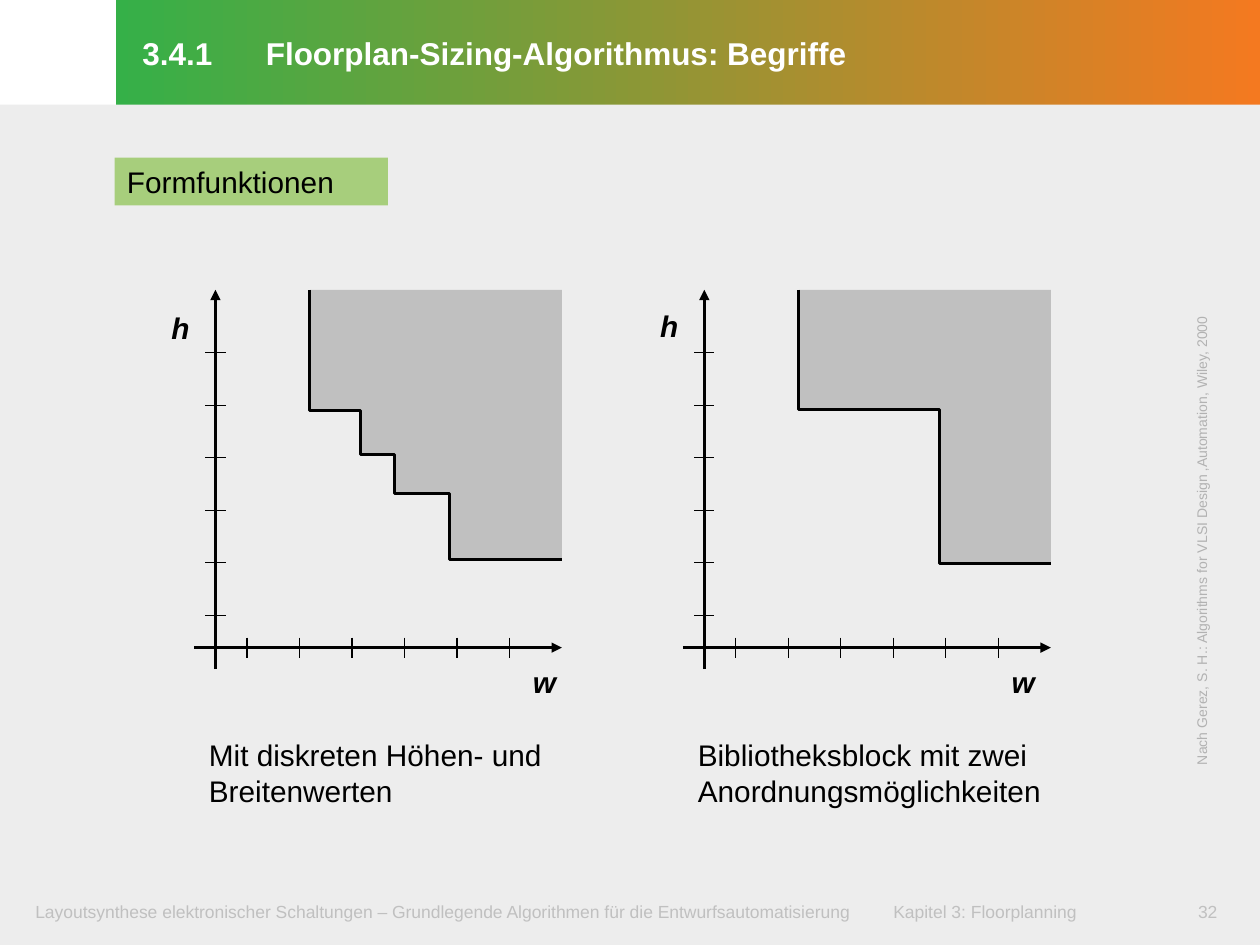
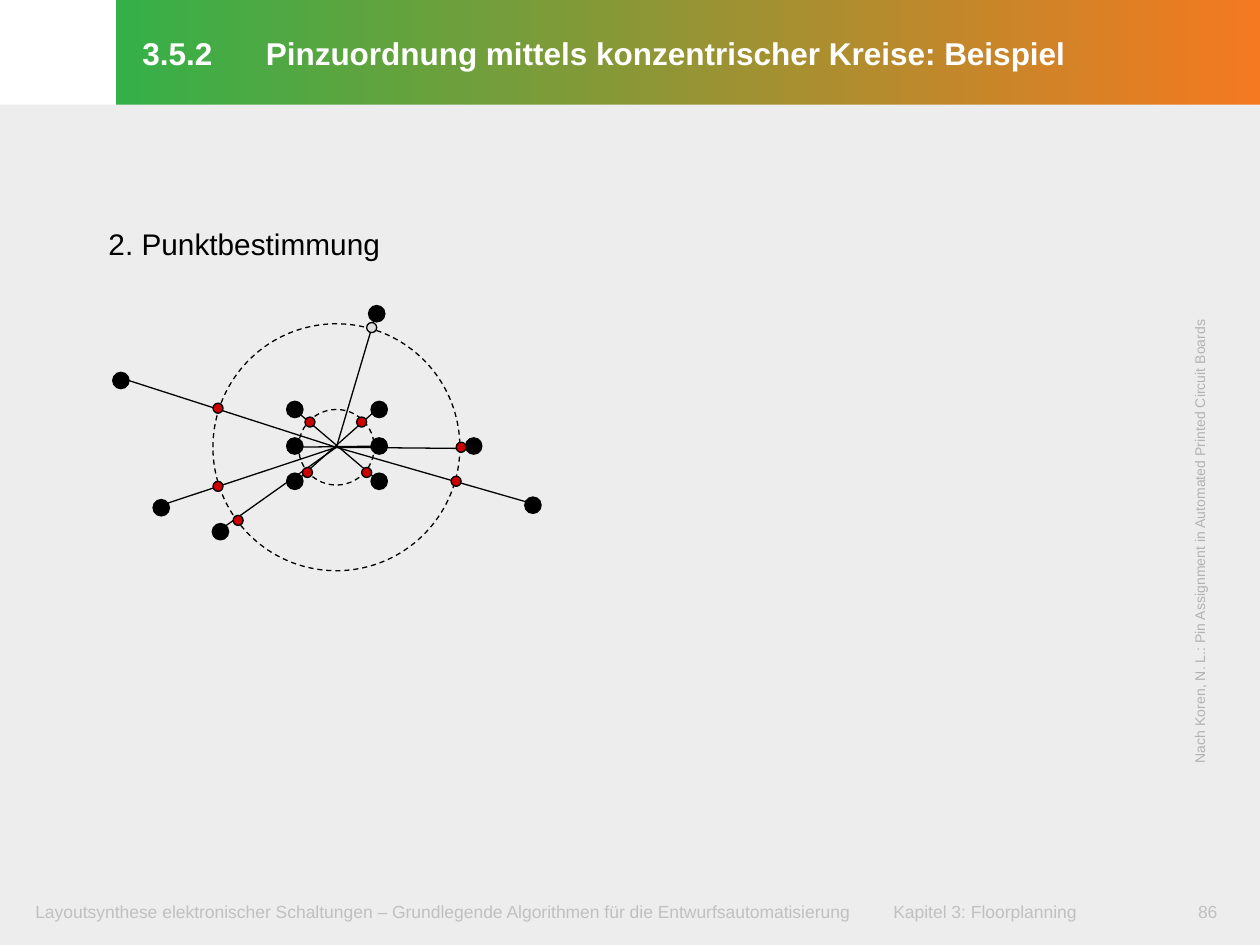
"""Build two slides on floorplan sizing and pin assignment."""
from dataclasses import dataclass

from lxml import etree
from pptx import Presentation
from pptx.dml.color import RGBColor
from pptx.enum import dml, shapes, text
from pptx.oxml import ns
from pptx.util import Inches, Pt

FONT = "Arial"
BLACK = RGBColor(0x00, 0x00, 0x00)
WHITE = RGBColor(0xFF, 0xFF, 0xFF)
PANEL = RGBColor(0xED, 0xED, 0xED)
GREY = RGBColor(0xC0, 0xC0, 0xC0)
SOURCE_GREY = RGBColor(0xB2, 0xB2, 0xB2)
BAND_GREEN = RGBColor(0x35, 0xB0, 0x48)
BAND_ORANGE = RGBColor(0xF4, 0x79, 0x20)
LABEL_GREEN = RGBColor(0xA7, 0xCE, 0x7C)
RED = RGBColor(0xCC, 0x00, 0x00)
PALE = RGBColor(0xDD, 0xDD, 0xDD)

THIN, THICK = 0.75, 1.63
TICK_COUNT, TICK_STEP, TICK_HALF = 6, 5 / 12, 0.08
PIN_SIZE, MARK_SIZE = 0.13, 0.08
FOOTER = ("Layoutsynthese elektronischer Schaltungen – Grundlegende Algorithmen "
          "für die Entwurfsautomatisierung\tKapitel 3: Floorplanning")

Point = tuple[float, float]
Box = tuple[float, float, float, float]


@dataclass(frozen=True)
class ShapeFunctionPlot:
    """A height-width diagram; its axes cross at (axis_x, AXIS_Y)."""
    axis_x: float
    curve: tuple[Point, ...]
    height_label: Point
    width_label: Point
    caption: str


AXIS_Y, AXIS_TOP = 5.14, 2.3
PLOTS = (
    ShapeFunctionPlot(
        1.71,
        ((2.46, 2.3), (2.46, 3.26), (2.86, 3.26), (2.86, 3.61), (3.13, 3.61),
         (3.13, 3.92), (3.57, 3.92), (3.57, 4.44), (4.46, 4.44)),
        (1.25, 2.41), (4.12, 5.22),
        "Mit diskreten Höhen- und\nBreitenwerten"),
    ShapeFunctionPlot(
        5.59,
        ((6.34, 2.3), (6.34, 3.25), (7.46, 3.25), (7.46, 4.47), (8.34, 4.47)),
        (5.13, 2.39), (7.92, 5.22),
        "Bibliotheksblock mit zwei Anordnungsmöglichkeiten"),
)

CENTRE = (2.67, 3.55)
CIRCLE_RADII = (0.98, 0.3)
BLOCK_PINS = [(x, y) for x in (2.34, 3.01) for y in (3.25, 3.54, 3.82)]
OUTER_PINS = [(3.76, 3.54), (2.99, 2.49), (4.23, 4.01),
              (1.75, 4.22), (1.28, 4.03), (0.96, 3.02)]
RAYS = [((2.36, 3.27), (2.96, 3.78)), ((2.36, 3.81), (2.99, 3.25)),
        ((2.28, 3.55), (3.07, 3.54))]
RAYS += [(CENTRE, end) for end in ((0.96, 3), (4.2, 3.99), (1.28, 4.01),
                                   (2.99, 2.47), (1.74, 4.21), (3.76, 3.56))]
RED_MARKS = [(1.89, 4.13), (1.73, 3.24), (3.66, 3.55), (1.73, 3.86), (3.62, 3.82),
             (2.46, 3.35), (2.44, 3.75), (2.91, 3.75), (2.87, 3.35)]
PALE_MARK = (2.95, 2.6)


def write(shape, content: str, *, size: float = 17, color: RGBColor = BLACK,
          bold: bool = False, italic: bool = False, align=text.PP_ALIGN.LEFT,
          anchor=text.MSO_ANCHOR.TOP, wrap: bool = True, tab: float = 0,
          line_spacing: float = 0, margins: Box = (0.1, 0.05, 0.1, 0.05)) -> None:
    """Fill a shape with formatted text, one paragraph per line."""
    frame = shape.text_frame
    frame.text = content
    frame.word_wrap = wrap
    frame.auto_size = text.MSO_AUTO_SIZE.NONE
    frame.vertical_anchor = anchor
    (frame.margin_left, frame.margin_top,
     frame.margin_right, frame.margin_bottom) = map(Inches, margins)
    for paragraph in frame.paragraphs:
        paragraph.alignment = align
        if line_spacing:
            paragraph.line_spacing = Pt(line_spacing)
        if tab:
            properties = paragraph._p.get_or_add_pPr()
            tabs = etree.SubElement(properties, ns.qn("a:tabLst"))
            etree.SubElement(tabs, ns.qn("a:tab"), pos=str(Inches(tab)), algn="l")
        font = paragraph.font
        font.name, font.size = FONT, Pt(size)
        font.bold, font.italic = bold, italic
        font.color.rgb = color


def add_text(slide, box: Box, content: str, **formatting):
    """Add a text box and return it."""
    shape = slide.shapes.add_textbox(*map(Inches, box))
    write(shape, content, **formatting)
    return shape


def paint(shape, fill: RGBColor | None, line: RGBColor | None = None,
          width: float = THIN) -> None:
    """Set the fill and outline of a shape and drop its shadow."""
    shape.shadow.inherit = False
    if fill is None:
        shape.fill.background()
    else:
        shape.fill.solid()
        shape.fill.fore_color.rgb = fill
    if line is None:
        shape.line.fill.background()
    else:
        shape.line.color.rgb = line
        shape.line.width = Pt(width)


def add_rectangle(slide, box: Box, fill: RGBColor):
    """Add a plain filled rectangle."""
    shape = slide.shapes.add_shape(shapes.MSO_SHAPE.RECTANGLE, *map(Inches, box))
    paint(shape, fill)
    return shape


def add_circle(slide, centre: Point, size: float, fill: RGBColor | None):
    """Add an outlined circle around a centre."""
    left, top = (value - size / 2 for value in centre)
    shape = slide.shapes.add_shape(shapes.MSO_SHAPE.OVAL,
                                   *map(Inches, (left, top, size, size)))
    paint(shape, fill, BLACK)
    return shape


def add_line(slide, start: Point, end: Point, width: float = THIN,
             arrow: bool = False) -> None:
    """Add a straight black line, with an arrowhead at its end if asked."""
    connector = slide.shapes.add_connector(shapes.MSO_CONNECTOR.STRAIGHT,
                                           *map(Inches, (*start, *end)))
    connector.line.color.rgb = BLACK
    connector.line.width = Pt(width)
    properties = connector.element.spPr
    if arrow:
        etree.SubElement(properties.find(ns.qn("a:ln")), ns.qn("a:tailEnd"),
                         type="triangle")
    etree.SubElement(properties, ns.qn("a:effectLst"))


def add_outline(slide, points: tuple[Point, ...], closed: bool):
    """Add a freeform through the given points."""
    first, *rest = [(Inches(x), Inches(y)) for x, y in points]
    builder = slide.shapes.build_freeform(*first)
    builder.add_line_segments(rest, close=closed)
    return builder.convert_to_shape()


def add_slide(presentation, title: str, number: int, source: str, source_box: Box):
    """Add a slide with title band, panel, footer and source note."""
    slide = presentation.slides.add_slide(presentation.slide_layouts[5])
    band = slide.shapes.title
    band.left, band.top, band.width, band.height = map(Inches, (0.92, 0, 9.08, 0.83))
    band.fill.gradient()
    band.fill.gradient_angle = 0
    for stop, color, position in zip(band.fill.gradient_stops,
                                     (BAND_GREEN, BAND_ORANGE), (0, 1)):
        stop.color.rgb, stop.position = color, position
    write(band, title, size=18, color=WHITE, bold=True, tab=0.98, line_spacing=23.5,
          anchor=text.MSO_ANCHOR.MIDDLE, margins=(0.21, 0.05, 0.1, 0.07))
    add_rectangle(slide, (0, 0.83, 10, 6.67), PANEL)
    footer_format = {"size": 10, "color": GREY, "margins": (0.12, 0.06, 0.12, 0.06)}
    add_text(slide, (0.16, 7.09, 9.09, 0.32), FOOTER, tab=6.81, **footer_format)
    add_text(slide, (9.29, 7.09, 0.59, 0.32), str(number),
             align=text.PP_ALIGN.CENTER, **footer_format)
    note = add_text(slide, source_box, source, size=8, color=SOURCE_GREY, wrap=False)
    note.rotation = 270
    return slide


def draw_plot(slide, plot: ShapeFunctionPlot) -> None:
    """Draw one shape function with axes, ticks, labels and caption."""
    x, y = plot.axis_x, AXIS_Y
    corner = (plot.curve[-1][0], plot.curve[0][1])
    paint(add_outline(slide, (*plot.curve, corner), closed=True), GREY)
    paint(add_outline(slide, plot.curve, closed=False), None, BLACK, THICK)
    add_line(slide, (x, y + 0.17), (x, AXIS_TOP), THICK, arrow=True)
    add_line(slide, (x - 0.17, y), (x + 2.75, y), THICK, arrow=True)
    for index in range(TICK_COUNT):
        tick_x = x + 0.25 + index * TICK_STEP
        tick_y = AXIS_TOP + 0.5 + index * TICK_STEP
        add_line(slide, (tick_x, y - TICK_HALF), (tick_x, y + TICK_HALF))
        add_line(slide, (x - TICK_HALF, tick_y), (x + TICK_HALF, tick_y))
    for label, place in (("h", plot.height_label), ("w", plot.width_label)):
        add_text(slide, (*place, 0.5, 0.39), label, bold=True, italic=True,
                 margins=(0.11, 0.05, 0.11, 0.05))
    add_text(slide, (x - 0.15, 5.8, 3.4, 0.68), plot.caption)


def build_shape_functions(presentation) -> None:
    """Build the slide that compares two shape functions."""
    slide = add_slide(presentation, "3.4.1\tFloorplan-Sizing-Algorithmus: Begriffe", 32,
                      "Nach Gerez, S. H.: Algorithms for VLSI Design ‚Automation, "
                      "Wiley, 2000", (7.55, 4.06, 3.98, 0.24))
    write(add_rectangle(slide, (0.91, 1.25, 2.17, 0.38), LABEL_GREEN), "Formfunktionen")
    for plot in PLOTS:
        draw_plot(slide, plot)


def build_pin_assignment(presentation) -> None:
    """Build the slide on pin assignment with concentric circles."""
    slide = add_slide(presentation,
                      "3.5.2\tPinzuordnung mittels konzentrischer Kreise: Beispiel", 86,
                      "Nach Koren, N. L.: Pin Assignment in Automated Printed "
                      "Circuit Boards", (7.56, 4.07, 3.93, 0.24))
    add_text(slide, (0.66, 1.72, 2.45, 0.43), "2. Punktbestimmung", wrap=False,
             align=text.PP_ALIGN.CENTER, line_spacing=22.2,
             margins=(0.2, 0.05, 0.09, 0.07))
    for radius in CIRCLE_RADII:
        circle = add_circle(slide, CENTRE, 2 * radius, None)
        circle.line.dash_style = dml.MSO_LINE.DASH
    for pin in BLOCK_PINS + OUTER_PINS:
        add_circle(slide, pin, PIN_SIZE, BLACK)
    for start, end in RAYS:
        add_line(slide, start, end)
    for mark in RED_MARKS:
        add_circle(slide, mark, MARK_SIZE, RED)
    add_circle(slide, PALE_MARK, MARK_SIZE, PALE)


def main() -> None:
    """Create the presentation and save it."""
    presentation = Presentation()
    presentation.slide_width, presentation.slide_height = Inches(10), Inches(7.5)
    build_shape_functions(presentation)
    build_pin_assignment(presentation)
    presentation.save("out.pptx")


if __name__ == "__main__":
    main()
